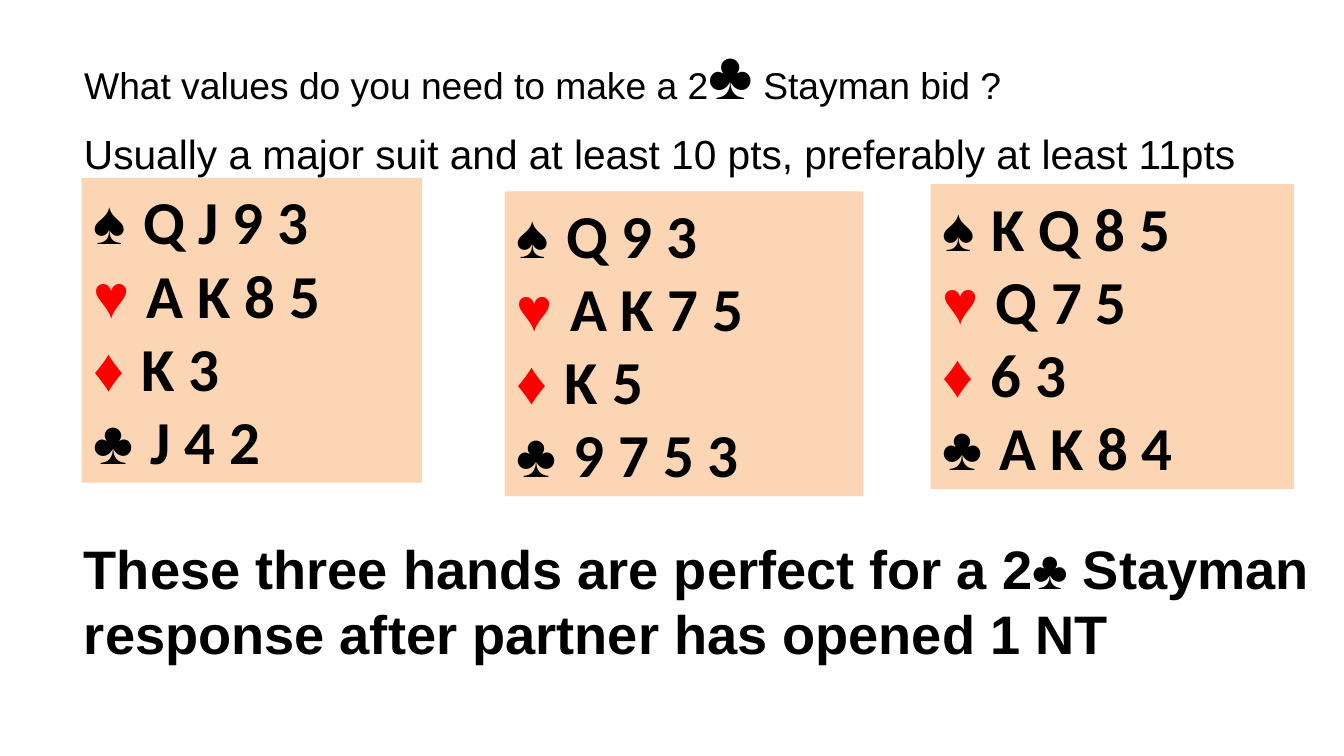
from pptx import Presentation
from pptx.dml.color import RGBColor
from pptx.enum.shapes import MSO_SHAPE as Shape
from pptx.enum.text import MSO_ANCHOR as Anchor, MSO_AUTO_SIZE as AutoSize, PP_ALIGN as Align
from pptx.util import Inches, Pt

QUESTION = [
    ("What values do you need to make a 2", {"size": 22}),
    ("♣", {"size": 40, "bold": True}),
    (" Stayman bid ?", {"size": 22}),
]
ANSWER = "Usually a major suit and at least 10 pts, preferably at least 11pts"
CONCLUSION = "These three hands are perfect for a 2♣ Stayman response after partner has opened 1 NT"
SUITS = [("♠", "000000"), ("♥", "FF0000"), ("♦", "FF0000"), ("♣", "000000")]
HANDS = [
    (0.67, 1.46, 2.79, ["Q J 9 3", "A K 8 5", "K 3", "J 4 2"]),
    (4.14, 1.57, 2.94, ["Q 9 3", "A K 7 5", "K 5", "9 7 5 3"]),
    (7.63, 1.51, 2.98, ["K Q 8 5", "Q 7 5", "6 3", "A K 8 4"]),
]
HAND_HEIGHT = 2.5
LEFT, TEXT_WIDTH = 0.59, 9.64


def rgb(color):
    return RGBColor.from_string(color)


def add_text(paragraph, text, size=24, font="Arial", color="000000", bold=False):
    run = paragraph.add_run()
    run.text = text
    run.font.size = Pt(size)
    run.font.name = font
    run.font.bold = bold
    run.font.color.rgb = rgb(color)


def prepare_frame(holder, anchor=Anchor.TOP, top_inset=0.05):
    frame = holder.text_frame
    frame.word_wrap = True
    frame.auto_size = AutoSize.NONE
    frame.vertical_anchor = anchor
    frame.margin_left = frame.margin_right = Inches(0.1)
    frame.margin_top, frame.margin_bottom = Inches(top_inset), Inches(0.05)
    frame.paragraphs[0].alignment = Align.LEFT
    return frame


def box(*lengths):
    return [Inches(length) for length in lengths]


deck = Presentation()
deck.slide_width, deck.slide_height = box(11.02, 6.2)
slide = deck.slides.add_slide(deck.slide_layouts[5])

title = slide.shapes.title
title.left, title.top, title.width, title.height = box(LEFT, 0.2, TEXT_WIDTH, 0.78)
question = prepare_frame(title, Anchor.MIDDLE).paragraphs[0]
for words, style in QUESTION:
    add_text(question, words, **style)

answer = slide.shapes.add_textbox(*box(LEFT, 0.98, TEXT_WIDTH, 0.75))
add_text(prepare_frame(answer, top_inset=0.08).paragraphs[0], ANSWER)

for left, top, width, holdings in HANDS:
    hand = slide.shapes.add_shape(Shape.RECTANGLE, *box(left, top, width, HAND_HEIGHT))
    hand.shadow.inherit = False
    hand.fill.solid()
    hand.fill.fore_color.rgb = rgb("FCD5B5")
    hand.line.fill.background()
    frame = prepare_frame(hand)
    for row, ((suit, color), cards) in enumerate(zip(SUITS, holdings)):
        line = frame.add_paragraph() if row else frame.paragraphs[0]
        line.alignment = Align.LEFT
        add_text(line, suit + " ", size=36, color=color, bold=True)
        add_text(line, cards, size=36, font="Calibri", bold=True)

conclusion = slide.shapes.add_textbox(*box(LEFT, 4.34, 11.63, 1.16))
add_text(prepare_frame(conclusion).paragraphs[0], CONCLUSION, size=32, bold=True)

deck.save("out.pptx")
